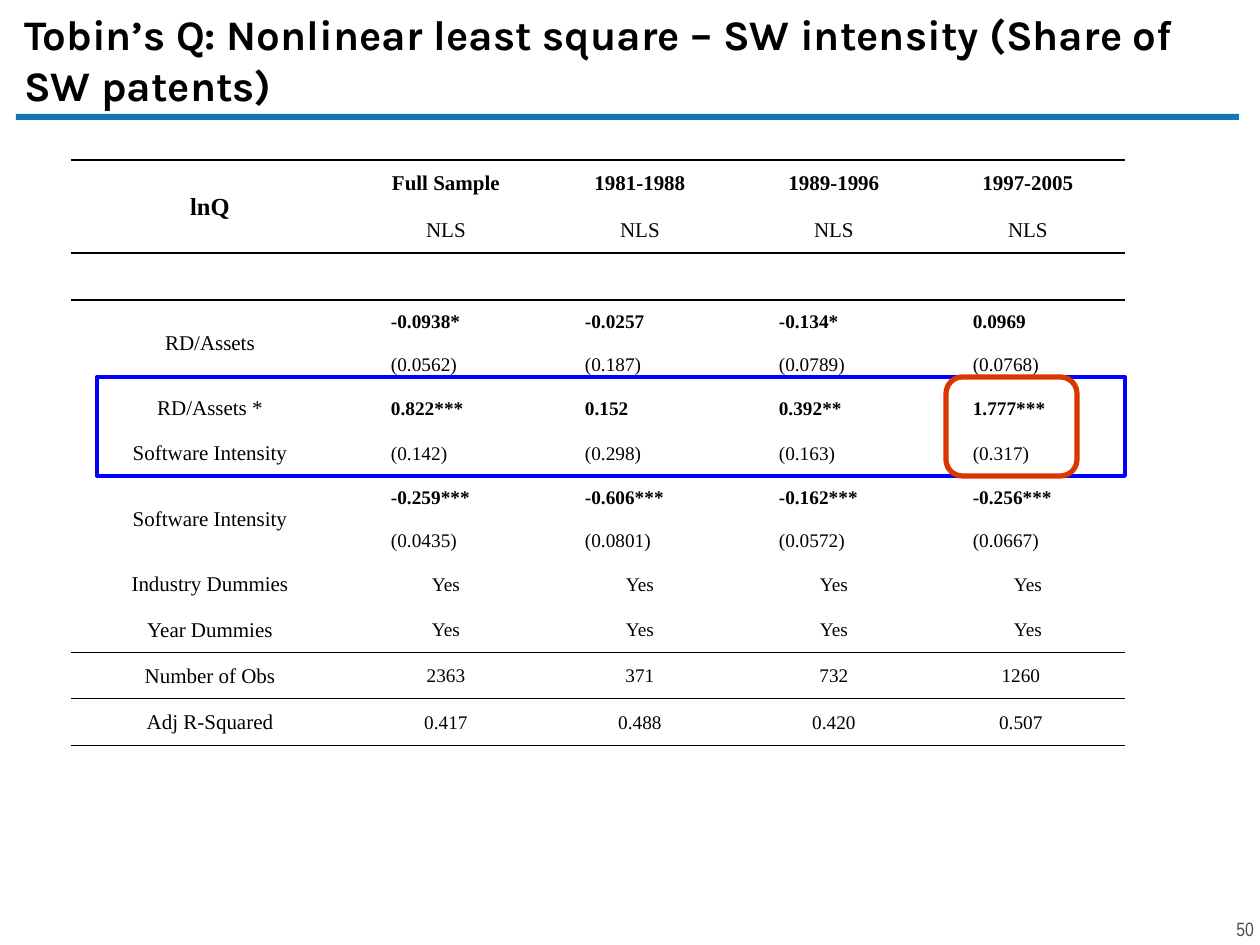
"""Build the slide with the nonlinear least squares results for Tobin's Q."""
from lxml import etree
from pptx import Presentation
from pptx import util as u
from pptx.dml.color import RGBColor
from pptx.enum import shapes, text
from pptx.oxml.ns import qn

COLORS = {"black": "000000", "white": "FFFFFF", "rule": "1277B5",
          "grey": "4D4D4D", "blue": "0000FF", "red": "D93700"}
SERIF = "Times New Roman"
PLAIN_STYLE = "{2D5ABB26-0587-4C30-8999-92F81FD0307C}"
COL_WIDTHS = [278] + [194] * 4
ROW_HEIGHTS = [46, 47, 47, 43, 43, 45, 45, 43, 43, 45, 46, 46, 47]
ROWS = [
    ["lnQ", "Full Sample", "1981-1988", "1989-1996", "1997-2005"],
    ["", "NLS", "NLS", "NLS", "NLS"],
    ["", "", "", "", ""],
    ["RD/Assets", "-0.0938*", "-0.0257", "-0.134*", "0.0969"],
    ["", "(0.0562)", "(0.187)", "(0.0789)", "(0.0768)"],
    ["RD/Assets *", "0.822***", "0.152", "0.392**", "1.777***"],
    ["Software Intensity", "(0.142)", "(0.298)", "(0.163)", "(0.317)"],
    ["Software Intensity", "-0.259***", "-0.606***", "-0.162***", "-0.256***"],
    ["", "(0.0435)", "(0.0801)", "(0.0572)", "(0.0667)"],
    ["Industry Dummies", "Yes", "Yes", "Yes", "Yes"],
    ["Year Dummies", "Yes", "Yes", "Yes", "Yes"],
    ["Number of Obs", "2363", "371", "732", "1260"],
    ["Adj R-Squared", "0.417", "0.488", "0.420", "0.507"],
]
LABEL_SPANS = [0, 3, 7]
BOLD_ROWS = {0, 3, 5, 7}
ESTIMATE_ROWS = range(3, 9)
TOP_RULES = {0, 2, 11}
BOTTOM_RULES = {1, 10, 12}


def px(n):
    """Turn a length in px into EMU."""
    return u.Emu(round(n * 914400 / 126))


def rgb(name):
    """Return the named colour."""
    return RGBColor.from_string(COLORS[name])


def write(tf, content, size, font=SERIF, color="black", bold=False, align="CENTER"):
    """Put one formatted paragraph into a text frame."""
    p = tf.paragraphs[0]
    p.alignment = getattr(text.PP_ALIGN, align)
    p.font.size = u.Pt(size)
    if content:
        r = p.add_run()
        r.text = content
        r.font.size, r.font.name, r.font.bold = u.Pt(size), font, bold
        r.font.color.rgb = rgb(color)


def clear_margins(tf):
    """Remove the insets of a text frame and keep its size fixed."""
    tf.margin_left = tf.margin_right = tf.margin_top = tf.margin_bottom = 0
    tf.auto_size = text.MSO_AUTO_SIZE.NONE
    tf.word_wrap = True


def add_title(s, content):
    """Place and format the title placeholder."""
    sp = s.shapes.title
    sp.left, sp.top, sp.width, sp.height = px(24), px(16), px(1211), px(86)
    tf = sp.text_frame
    clear_margins(tf)
    tf.vertical_anchor = text.MSO_ANCHOR.MIDDLE
    write(tf, content, 24, font="Karla", bold=True, align="LEFT")


def add_number(s, content):
    """Add the page number."""
    tf = s.shapes.add_textbox(px(1214), px(917), px(40), px(24)).text_frame
    clear_margins(tf)
    write(tf, content, 11, font="Arial Narrow", color="grey", align="RIGHT")


def add_box(s, kind, left, top, width, height, fill=None, line=None, weight=1):
    """Add a filled or outlined preset shape."""
    sp = s.shapes.add_shape(kind, px(left), px(top), px(width), px(height))
    sp.shadow.inherit = False
    if fill:
        sp.fill.solid()
        sp.fill.fore_color.rgb = rgb(fill)
    else:
        sp.fill.background()
    if line:
        sp.line.color.rgb = rgb(line)
        sp.line.width = u.Pt(weight)
    else:
        sp.line.fill.background()


def add_border(cell, side, index):
    """Draw a black one-point border on one side of a cell."""
    ln = etree.Element(qn(f"a:ln{side}"), w=str(u.Pt(1)))
    fill = etree.SubElement(ln, qn("a:solidFill"))
    etree.SubElement(fill, qn("a:srgbClr"), val=COLORS["black"])
    cell._tc.get_or_add_tcPr().insert(index, ln)


def format_cell(cell, row, col):
    """Fill, space and border one cell and write its text."""
    estimate = col > 0 and row in ESTIMATE_ROWS
    cell.fill.solid()
    cell.fill.fore_color.rgb = rgb("white")
    cell.vertical_anchor = text.MSO_ANCHOR.MIDDLE
    cell.margin_left = px(42 if estimate else 1)
    cell.margin_right = px(15 if row > 10 and col == 4 else 1)
    cell.margin_top, cell.margin_bottom = px(1), 0
    sides = [side for side, rules in (("T", TOP_RULES), ("B", BOTTOM_RULES))
             if row in rules or (side == "B" and (row, col) == (0, 0))]
    for index, side in enumerate(sides):
        add_border(cell, side, index)
    if (row, col) == (0, 0):
        size = 14
    else:
        size = 12 if col == 0 or row < 2 else 11
    write(cell.text_frame, ROWS[row][col], size,
          bold=row in BOLD_ROWS and (col > 0 or row == 0),
          align="LEFT" if estimate else "CENTER")


def add_results(s):
    """Add the regression table."""
    frame = s.shapes.add_table(len(ROWS), len(COL_WIDTHS), px(71), px(160),
                               px(sum(COL_WIDTHS)), px(sum(ROW_HEIGHTS)))
    table = frame.table
    table.first_row = table.horz_banding = False
    table._tbl.tblPr.find(qn("a:tableStyleId")).text = PLAIN_STYLE
    for column, width in zip(table.columns, COL_WIDTHS):
        column.width = px(width)
    for row, height in enumerate(ROW_HEIGHTS):
        table.rows[row].height = px(height)
        for col in range(len(COL_WIDTHS)):
            format_cell(table.cell(row, col), row, col)
    for row in LABEL_SPANS:
        table.cell(row, 0).merge(table.cell(row + 1, 0))


def main():
    """Build and save the slide."""
    prs = Presentation()
    prs.slide_width, prs.slide_height = px(1260), px(945)
    s = prs.slides.add_slide(prs.slide_layouts[5])
    rect = shapes.MSO_SHAPE.RECTANGLE
    add_title(s, "Tobin’s Q: Nonlinear least square – SW intensity (Share of SW patents)")
    add_number(s, "50")
    add_box(s, rect, 16, 114, 1223, 6, fill="rule")
    add_results(s)
    add_box(s, rect, 97, 377, 1028, 99, line="blue", weight=2.25)
    add_box(s, shapes.MSO_SHAPE.ROUNDED_RECTANGLE, 946, 377, 131, 99, line="red", weight=3)
    prs.save("out.pptx")


if __name__ == "__main__":
    main()
